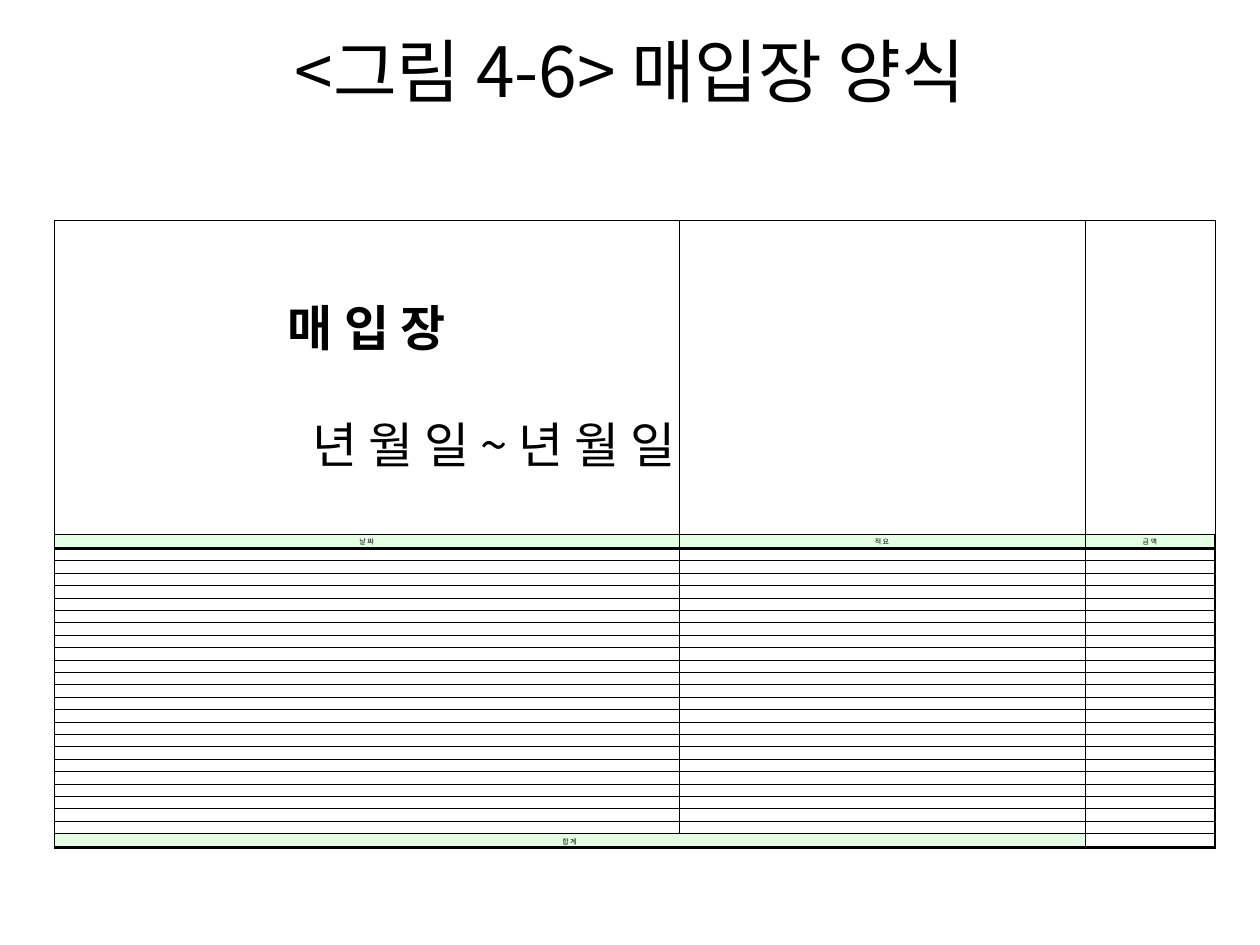
from dataclasses import dataclass

from lxml import etree
from pptx import Presentation
from pptx import util as u
from pptx.dml.color import RGBColor
from pptx.enum import text
from pptx.oxml.ns import qn


@dataclass(frozen=True)
class Theme:
    font: str = "Noto Sans CJK KR"
    ink: str = "000000"
    label_fill: str = "E5FFE5"
    title_size: float = 39.6
    heading_size: float = 28
    label_size: float = 4
    thin: float = 0.28
    outer: float = 1.7
    header_rule: float = 1.98


THEME = Theme()
COLUMN_WIDTHS = [12.6, 8.18, 2.62]
ROW_HEIGHTS = [6.32, 0.29] + [0.25] * 23 + [0.29]
LAST_ROW = len(ROW_HEIGHTS) - 1
LABELS = {(1, 0): "날 짜", (1, 1): "적 요", (1, 2): "금 액", (LAST_ROW, 0): "합 계"}


def format_paragraph(paragraph, size, align, spacing, bold=False):
    paragraph.alignment = align
    paragraph.line_spacing = spacing
    for run in paragraph.runs:
        run.font.size = u.Pt(size)
        run.font.bold = bold
        run.font.name = THEME.font
        run.font.color.rgb = RGBColor.from_string(THEME.ink)
        east_asian = etree.SubElement(run.font._element, qn("a:ea"))
        east_asian.set("typeface", THEME.font)


def add_title(slide, words):
    box = slide.shapes.add_textbox(u.Cm(1.27), u.Cm(0.76), u.Cm(22.86), u.Cm(3.18))
    frame = box.text_frame
    frame.word_wrap = True
    frame.vertical_anchor = text.MSO_ANCHOR.TOP
    frame.text = words
    format_paragraph(frame.paragraphs[0], THEME.title_size, text.PP_ALIGN.CENTER, 0.8)


def row_rule(edge):
    """Width of the horizontal line above row number edge."""
    return {2: THEME.header_rule, LAST_ROW + 1: THEME.outer}.get(edge, THEME.thin)


def column_rule(edge, row):
    """Width of the vertical line left of column number edge."""
    return THEME.outer if edge == len(COLUMN_WIDTHS) and row > 0 else THEME.thin


def set_borders(cell, row, column):
    widths = {
        "a:lnL": column_rule(column, row),
        "a:lnR": column_rule(column + cell.span_width, row),
        "a:lnT": row_rule(row),
        "a:lnB": row_rule(row + 1),
    }
    properties = cell._tc.get_or_add_tcPr()
    for position, (tag, width) in enumerate(widths.items()):
        line = etree.Element(qn(tag), w=str(int(u.Pt(width))))
        fill = etree.SubElement(line, qn("a:solidFill"))
        etree.SubElement(fill, qn("a:srgbClr"), val=THEME.ink)
        properties.insert(position, line)


def set_label(cell, words):
    cell.text_frame.text = words
    format_paragraph(cell.text_frame.paragraphs[0], THEME.label_size,
                     text.PP_ALIGN.CENTER, 1.2)
    cell.fill.solid()
    cell.fill.fore_color.rgb = RGBColor.from_string(THEME.label_fill)


def set_empty(cell):
    """Keep the empty paragraph small so that it does not stretch its row."""
    end = etree.SubElement(cell.text_frame.paragraphs[0]._p, qn("a:endParaRPr"))
    end.set("sz", str(int(THEME.label_size * 100)))
    cell.fill.background()


def set_heading(cell):
    cell.text_frame.text = "매 입 장\n년 월 일 ~ 년 월 일"
    name, period = cell.text_frame.paragraphs
    format_paragraph(name, THEME.heading_size, text.PP_ALIGN.CENTER, 1.2, bold=True)
    format_paragraph(period, THEME.heading_size, text.PP_ALIGN.RIGHT, 1.65)
    cell.fill.background()


def add_ledger(slide):
    frame = slide.shapes.add_table(
        len(ROW_HEIGHTS), len(COLUMN_WIDTHS), u.Cm(1.09), u.Cm(4.44),
        u.Cm(sum(COLUMN_WIDTHS)), u.Cm(sum(ROW_HEIGHTS)))
    table = frame.table
    table.first_row = table.horz_banding = False
    for column, width in zip(table.columns, COLUMN_WIDTHS):
        column.width = u.Cm(width)
    for row, height in zip(table.rows, ROW_HEIGHTS):
        row.height = u.Cm(height)
    table.cell(LAST_ROW, 0).merge(table.cell(LAST_ROW, 1))

    for row in range(len(ROW_HEIGHTS)):
        for column in range(len(COLUMN_WIDTHS)):
            cell = table.cell(row, column)
            cell.vertical_anchor = text.MSO_ANCHOR.MIDDLE
            cell.margin_left = cell.margin_right = u.Cm(0.08)
            cell.margin_top = cell.margin_bottom = u.Cm(0.02)
            if (row, column) == (0, 0):
                set_heading(cell)
            elif (row, column) in LABELS:
                set_label(cell, LABELS[row, column])
            else:
                set_empty(cell)
            if not cell.is_spanned:
                set_borders(cell, row, column)


def main():
    presentation = Presentation()
    presentation.slide_width = u.Cm(25.4)
    presentation.slide_height = u.Cm(19.05)
    slide = presentation.slides.add_slide(presentation.slide_layouts[6])
    add_title(slide, "<그림 4-6> 매입장 양식")
    add_ledger(slide)
    presentation.save("out.pptx")


if __name__ == "__main__":
    main()
